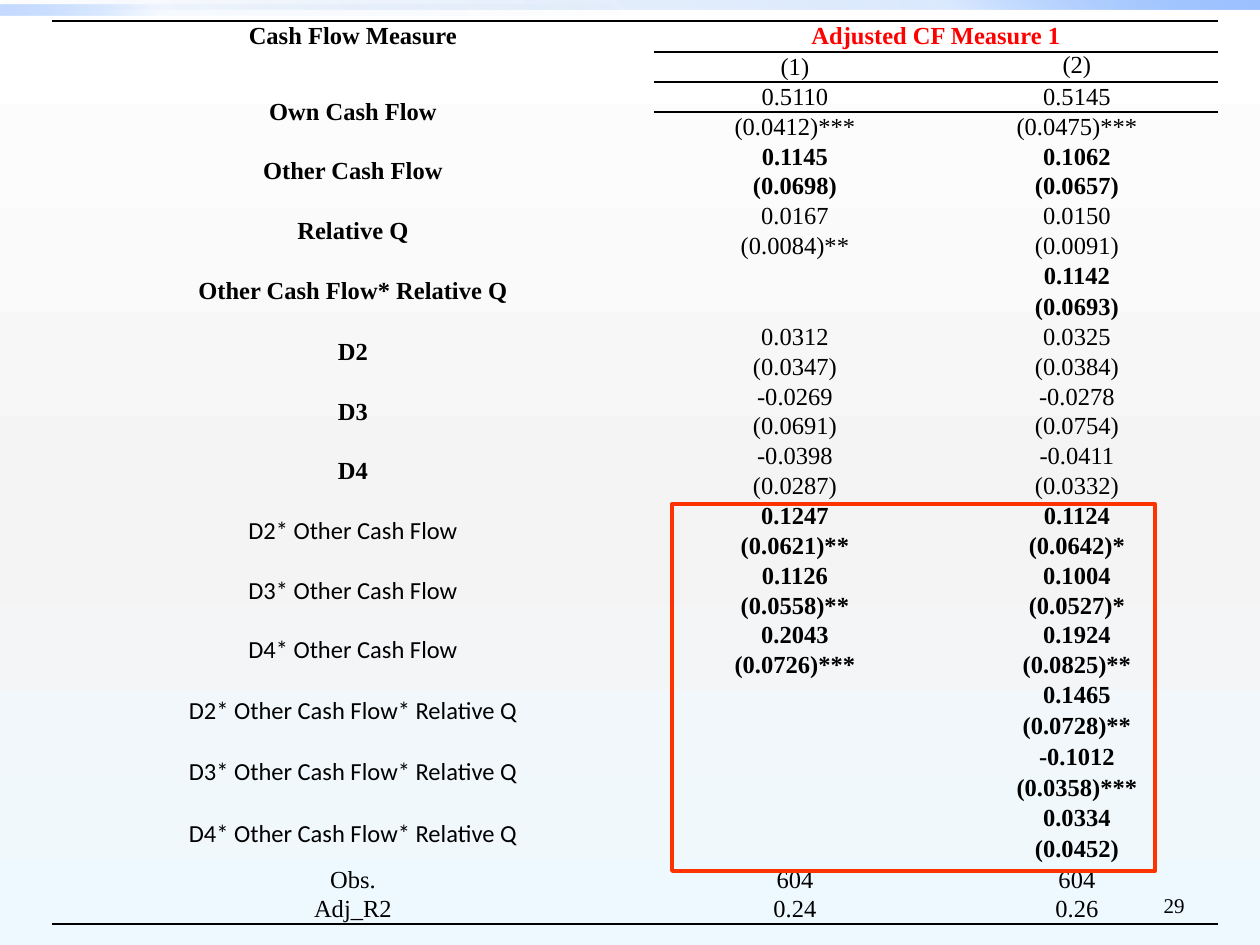
from lxml import etree
from pptx import Presentation
from pptx import util as u
from pptx.dml.color import RGBColor
from pptx.enum import shapes, text
from pptx.oxml.ns import qn

COLORS = {"text": "000000", "heading": "FF0000", "highlight": "FF3300",
          "white": "FFFFFF", "gray": "F4F4F4", "ice": "EEF9FF",
          "navy": "0058B7", "blue": "4F95FF", "sky": "9EC2FF"}
SERIF, SANS = "Times New Roman", "Calibri"


def px(n):
    return u.Emu(round(n * 914400 / 126))


def set_gradient(fill, element, stops, angle):
    """Fill with (position %, colour, opacity %) stops; angle is counter-clockwise."""
    fill.gradient()
    fill.gradient_angle = angle
    stop_list = element.find(".//" + qn("a:gsLst"))
    for old in list(stop_list):
        stop_list.remove(old)
    for position, color, opacity in stops:
        gs = etree.SubElement(stop_list, qn("a:gs"), pos=str(position * 1000))
        rgb = etree.SubElement(gs, qn("a:srgbClr"), val=COLORS[color])
        etree.SubElement(rgb, qn("a:alpha"), val=str(opacity * 1000))


prs = Presentation()
prs.slide_width, prs.slide_height = px(1260), px(945)
slide = prs.slides.add_slide(prs.slide_layouts[6])

# Background and top bands
set_gradient(slide.background.fill, slide.background._cSld,
             [(0, "white", 100), (55, "gray", 100), (100, "ice", 100)], 270)
bands = [(0, 1260, 45, (0, 20, 100)), (5, 630, 225, (0, 5, 60))]
for top, width, angle, opacities in bands:
    sp = slide.shapes.add_shape(shapes.MSO_SHAPE.RECTANGLE, 0, px(top), px(width), px(10))
    sp.shadow.inherit = False
    sp.line.fill.background()
    stops = zip((0, 75, 100), ("navy", "blue", "sky"), opacities)
    set_gradient(sp.fill, sp._element, stops, angle)

# Page number
sp = slide.shapes.add_textbox(px(903), px(861), px(294), px(63))
tf = sp.text_frame
tf.word_wrap = True
tf.vertical_anchor = text.MSO_ANCHOR.BOTTOM
p = tf.paragraphs[0]
p.text = "29"
p.alignment = text.PP_ALIGN.RIGHT
p.font.size, p.font.name = u.Pt(12), SERIF
p.font.color.rgb = RGBColor.from_string(COLORS["text"])

# Regression results: label, then estimate and standard error of each model
results = [
    ("Own Cash Flow", ("0.5110", "(0.0412)***"), ("0.5145", "(0.0475)***")),
    ("Other Cash Flow", ("0.1145", "(0.0698)"), ("0.1062", "(0.0657)")),
    ("Relative Q", ("0.0167", "(0.0084)**"), ("0.0150", "(0.0091)")),
    ("Other Cash Flow* Relative Q", ("", ""), ("0.1142", "(0.0693)")),
    ("D2", ("0.0312", "(0.0347)"), ("0.0325", "(0.0384)")),
    ("D3", ("-0.0269", "(0.0691)"), ("-0.0278", "(0.0754)")),
    ("D4", ("-0.0398", "(0.0287)"), ("-0.0411", "(0.0332)")),
    ("D2* Other Cash Flow", ("0.1247", "(0.0621)**"), ("0.1124", "(0.0642)*")),
    ("D3* Other Cash Flow", ("0.1126", "(0.0558)**"), ("0.1004", "(0.0527)*")),
    ("D4* Other Cash Flow", ("0.2043", "(0.0726)***"), ("0.1924", "(0.0825)**")),
    ("D2* Other Cash Flow* Relative Q", ("", ""), ("0.1465", "(0.0728)**")),
    ("D3* Other Cash Flow* Relative Q", ("", ""), ("-0.1012", "(0.0358)***")),
    ("D4* Other Cash Flow* Relative Q", ("", ""), ("0.0334", "(0.0452)")),
]

# Each row: cell texts, label bold, values bold, label font
rows = [(("Cash Flow Measure", "Adjusted CF Measure 1", ""), True, True, SERIF),
        (("", "(1)", "(2)"), False, False, SERIF)]
for label, model_1, model_2 in results:
    dummy_product = label.startswith("D") and "*" in label
    style = (not dummy_product, "Other Cash Flow" in label,
             SANS if dummy_product else SERIF)
    rows.append(((label, model_1[0], model_2[0]), *style))
    rows.append((("", model_1[1], model_2[1]), *style))
rows += [(("Obs.", "604", "604"), False, False, SERIF),
         (("Adj_R2", "0.24", "0.26"), False, False, SERIF)]

# Horizontal rules: row boundary -> columns it crosses
rules = {0: (0, 1, 2), 1: (1, 2), 2: (1, 2), len(rows): (0, 1, 2)}

table = slide.shapes.add_table(len(rows), 3, px(52), px(21), px(1166), px(902)).table
table.first_row = table.horz_banding = False
no_grid_style = "{2D5ABB26-0587-4C30-8999-92F81FD0307C}"
table._tbl.tblPr.find(qn("a:tableStyleId")).text = no_grid_style
for column, width in zip(table.columns, (602, 282, 282)):
    column.width = px(width)

for i, (texts, label_bold, values_bold, label_font) in enumerate(rows):
    sparse = i < 2 or not texts[1]
    table.rows[i].height = px((31 if sparse else 30) - (i % 4 == 1))
    for j, content in enumerate(texts):
        cell = table.cell(i, j)
        cell.margin_left = cell.margin_right = px(2)
        cell.margin_top = cell.margin_bottom = 0
        top_aligned = (i, j) == (1, 2)
        cell.vertical_anchor = text.MSO_ANCHOR.TOP if top_aligned else text.MSO_ANCHOR.MIDDLE
        tcPr = cell._tc.get_or_add_tcPr()
        for tag, boundary in (("a:lnT", i), ("a:lnB", i + 1)):
            if j in rules.get(boundary, ()):
                ln = etree.SubElement(tcPr, qn(tag), w=str(u.Pt(1.5)))
                solid = etree.SubElement(ln, qn("a:solidFill"))
                etree.SubElement(solid, qn("a:srgbClr"), val=COLORS["text"])
        cell.fill.background()
        p = cell.text_frame.paragraphs[0]
        p.alignment = text.PP_ALIGN.CENTER
        p.font.size = u.Pt(14)
        if not content:
            etree.SubElement(p._p, qn("a:endParaRPr"), sz="1400")
            continue
        p.text = content
        p.font.name = SERIF if j else label_font
        p.font.bold = values_bold if j else label_bold
        color = "heading" if (i, j) == (0, 1) else "text"
        p.font.color.rgb = RGBColor.from_string(COLORS[color])

table.cell(0, 1).merge(table.cell(0, 2))
for i in range(2, 2 + 2 * len(results), 2):
    table.cell(i, 0).merge(table.cell(i + 1, 0))

# Frame around the interaction estimates
sp = slide.shapes.add_shape(shapes.MSO_SHAPE.RECTANGLE, px(672), px(504), px(483), px(367))
sp.shadow.inherit = False
sp.fill.background()
sp.line.color.rgb = RGBColor.from_string(COLORS["highlight"])
sp.line.width = u.Pt(2.25)

prs.save("out.pptx")
